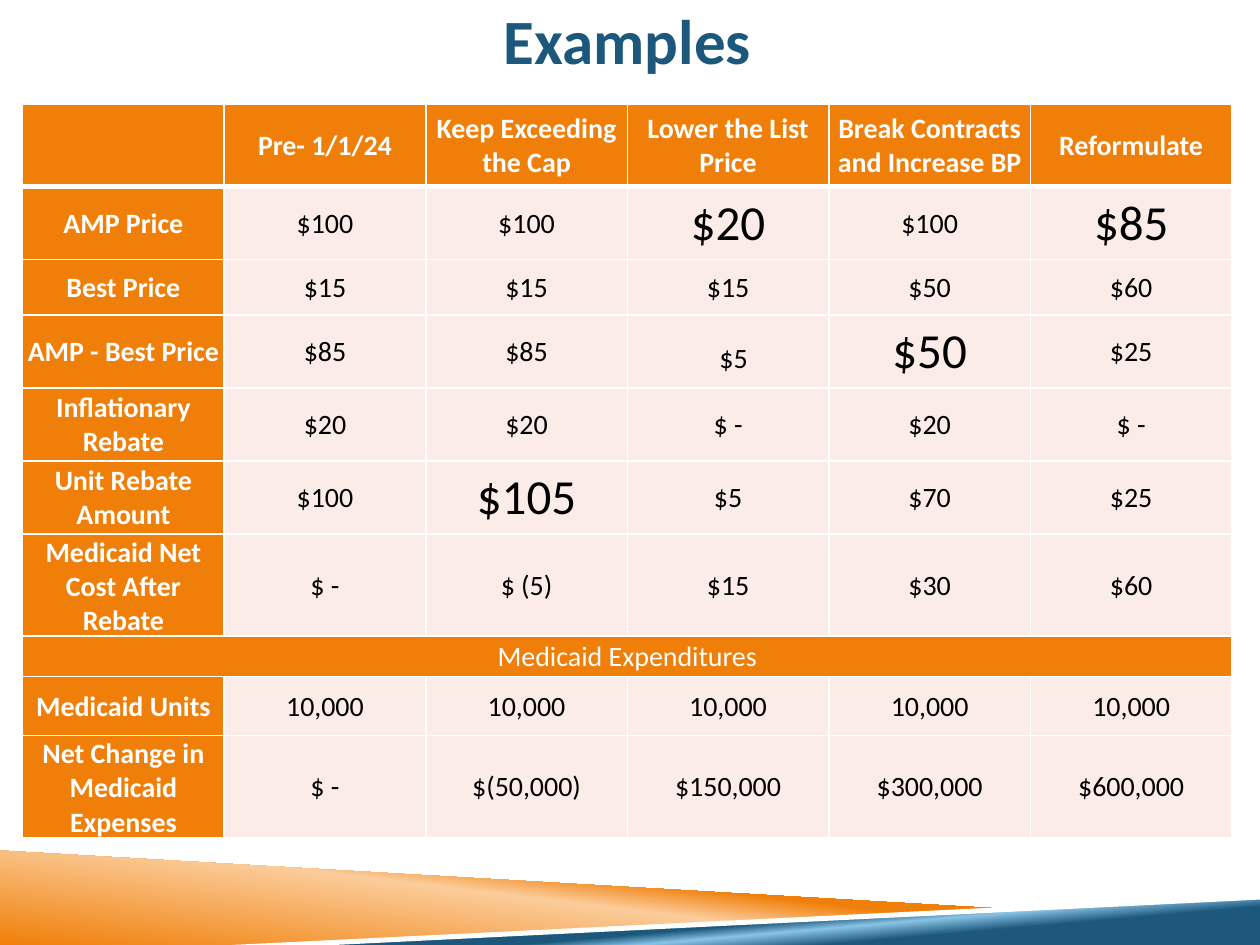
import copy
import dataclasses
import pptx
import pptx.dml.color
import pptx.enum.text
import pptx.oxml.ns
import pptx.util
from lxml import etree

Inches = pptx.util.Inches
Pt = pptx.util.Pt
qn = pptx.oxml.ns.qn


@dataclasses.dataclass(frozen=True)
class Theme:
    font: str = "Calibri"
    orange: str = "F07F09"
    peach: str = "FBCC9A"
    blue: str = "1B587C"
    sky: str = "89C3E5"
    pale: str = "FCECE7"
    white: str = "FFFFFF"
    black: str = "000000"
    title: int = 36
    body: int = 16
    big: int = 28


HEAD = ["", "Pre- 1/1/24", "Keep Exceeding the Cap", "Lower the List Price",
        "Break Contracts and Increase BP", "Reformulate"]
ROWS = [
    HEAD,
    ["AMP Price", "$100", "$100", "$20", "$100", "$85"],
    ["Best Price", "$15", "$15", "$15", "$50", "$60"],
    ["AMP - Best Price", "$85", "$85", "$5", "$50", "$25"],
    ["Inflationary Rebate", "$20", "$20", "$ -", "$20", "$ -"],
    ["Unit Rebate Amount", "$100", "$105", "$5", "$70", "$25"],
    ["Medicaid Net Cost After Rebate", "$ -", "$ (5)", "$15", "$30", "$60"],
    ["Medicaid Expenditures"],
    ["Medicaid Units"] + ["10,000"] * 5,
    ["Net Change in Medicaid Expenses", "$ -", "$(50,000)", "$150,000",
     "$300,000", "$600,000"],
]
HEIGHTS = [0.65, 0.58, 0.44, 0.58, 0.58, 0.58, 0.78, 0.32, 0.47, 0.78]
BIG = {(1, 3), (1, 5), (3, 4), (5, 2)}
LOWERED = (3, 3)  # a tall leading space sets this price lower
BAND = 7


def color(code):
    return pptx.dml.color.RGBColor.from_string(code)


def assign(target, values):
    for name, value in values.items():
        setattr(target, name, value)


class Deck:
    def __init__(self, theme):
        self.theme = theme
        self.file = pptx.Presentation()
        assign(self.file, {"slide_width": Inches(10), "slide_height": Inches(7.5)})
        self.slide = self.file.slides.add_slide(self.file.slide_layouts[6])

    def label(self, par, text, size, ink, bold):
        par.alignment = pptx.enum.text.PP_ALIGN.CENTER
        run = par.add_run()
        run.text = text
        assign(run.font, {"name": self.theme.font, "size": Pt(size), "bold": bold})
        run.font.color.rgb = color(ink)

    def title(self, text, left, top, width, height):
        box = self.slide.shapes.add_textbox(*map(Inches, (left, top, width, height)))
        frame = box.text_frame
        assign(frame, {"word_wrap": True, "margin_left": 0, "margin_right": 0,
                       "vertical_anchor": pptx.enum.text.MSO_ANCHOR.MIDDLE})
        self.label(frame.paragraphs[0], text, self.theme.title, self.theme.blue, True)

    def blade(self, points, stops, angle=0):
        """Draw a polygon; stops is a list of (position, colour)."""
        points = [(Inches(x), Inches(y)) for x, y in points]
        pen = self.slide.shapes.build_freeform(*points[0], scale=1.0)
        pen.add_line_segments(points[1:], close=True)
        shape = pen.convert_to_shape()
        shape.shadow.inherit = False
        shape.line.fill.background()
        if len(stops) == 1:
            shape.fill.solid()
            shape.fill.fore_color.rgb = color(stops[0][1])
            return
        shape.fill.gradient()
        shape.fill.gradient_angle = angle
        holder = next(shape._element.iter(qn("a:gsLst")))
        for _ in stops[2:]:
            holder.append(copy.deepcopy(holder[0]))
        for stop, (place, code) in zip(shape.fill.gradient_stops, stops):
            stop.position = place
            stop.color.rgb = color(code)

    def border(self, cell, top, bottom):
        props = cell._tc.get_or_add_tcPr()
        for spot, (side, width) in enumerate(
                {"L": 1, "R": 1, "T": top, "B": bottom}.items()):
            line = etree.Element(qn(f"a:ln{side}"), w=str(Pt(width)))
            fill = etree.SubElement(line, qn("a:solidFill"))
            etree.SubElement(fill, qn("a:srgbClr"), val=self.theme.white)
            props.insert(spot, line)

    def cell(self, cell, row, col, text):
        theme = self.theme
        head = row in (0, BAND) or col == 0
        assign(cell, {"margin_left": Inches(0.01), "margin_right": Inches(0.01),
                      "margin_top": Inches(0.01), "margin_bottom": 0,
                      "vertical_anchor": pptx.enum.text.MSO_ANCHOR.MIDDLE})
        cell.fill.solid()
        cell.fill.fore_color.rgb = color(theme.orange if head else theme.pale)
        self.border(cell, 3 if row == 1 else 1, 3 if row == 0 else 1)
        if not text:
            return
        par = cell.text_frame.paragraphs[0]
        ink = theme.white if head else theme.black
        if (row, col) == LOWERED:
            self.label(par, " ", theme.big, ink, False)
        size = theme.big if (row, col) in BIG else theme.body
        self.label(par, text, size, ink, head and row != BAND)

    def table(self, rows, heights, left, top, width):
        count = len(rows[0])
        frame = self.slide.shapes.add_table(
            len(rows), count, Inches(left), Inches(top), Inches(width),
            Inches(sum(heights)))
        grid = frame.table
        assign(grid, {"first_row": False, "horz_banding": False})
        for col in grid.columns:
            col.width = Inches(width / count)
        for row, (texts, height) in enumerate(zip(rows, heights)):
            grid.rows[row].height = Inches(height)
            if len(texts) == 1:
                grid.cell(row, 0).merge(grid.cell(row, count - 1))
            for col, text in enumerate(texts):
                self.cell(grid.cell(row, col), row, col, text)


def main():
    theme = Theme()
    deck = Deck(theme)
    deck.blade([(0, 6.75), (7.92, 7.21), (2, 7.5), (0, 7.5)],
               [(0, theme.orange), (0.52, theme.peach), (0.66, theme.orange)], 83)
    deck.blade([(1.98, 7.5), (10, 7.12), (10, 7.5)],
               [(0.28, theme.blue), (0.4, theme.sky), (0.48, theme.blue)], 95)
    deck.blade([(10, 7.1), (1.84, 7.5), (2.66, 7.5), (10, 7.14)],
               [(0, theme.white)])
    deck.title("Examples", 0.67, -0.17, 8.62, 0.96)
    deck.table(ROWS, HEIGHTS, 0.18, 0.83, 9.6)
    deck.file.save("out.pptx")


if __name__ == "__main__":
    main()
